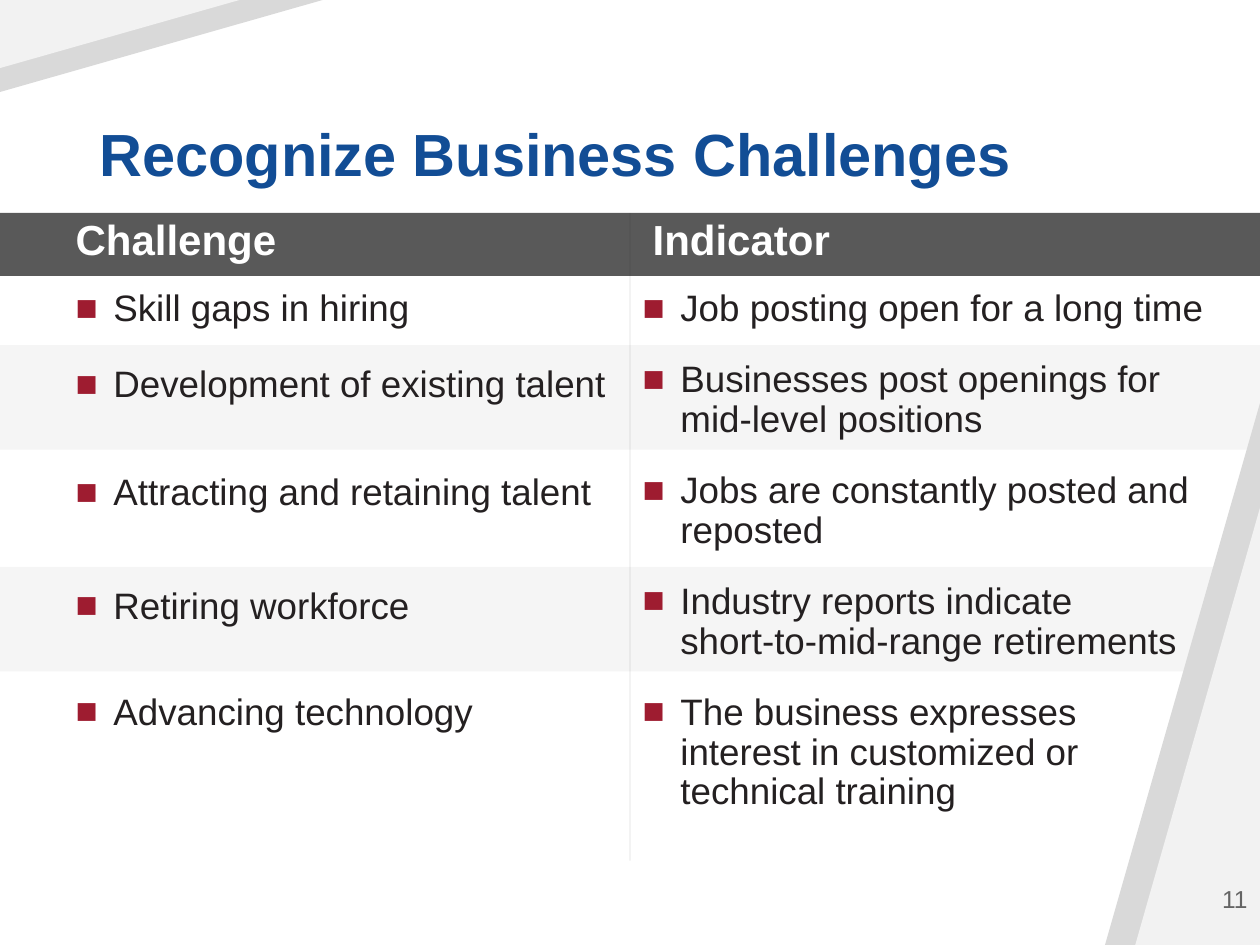
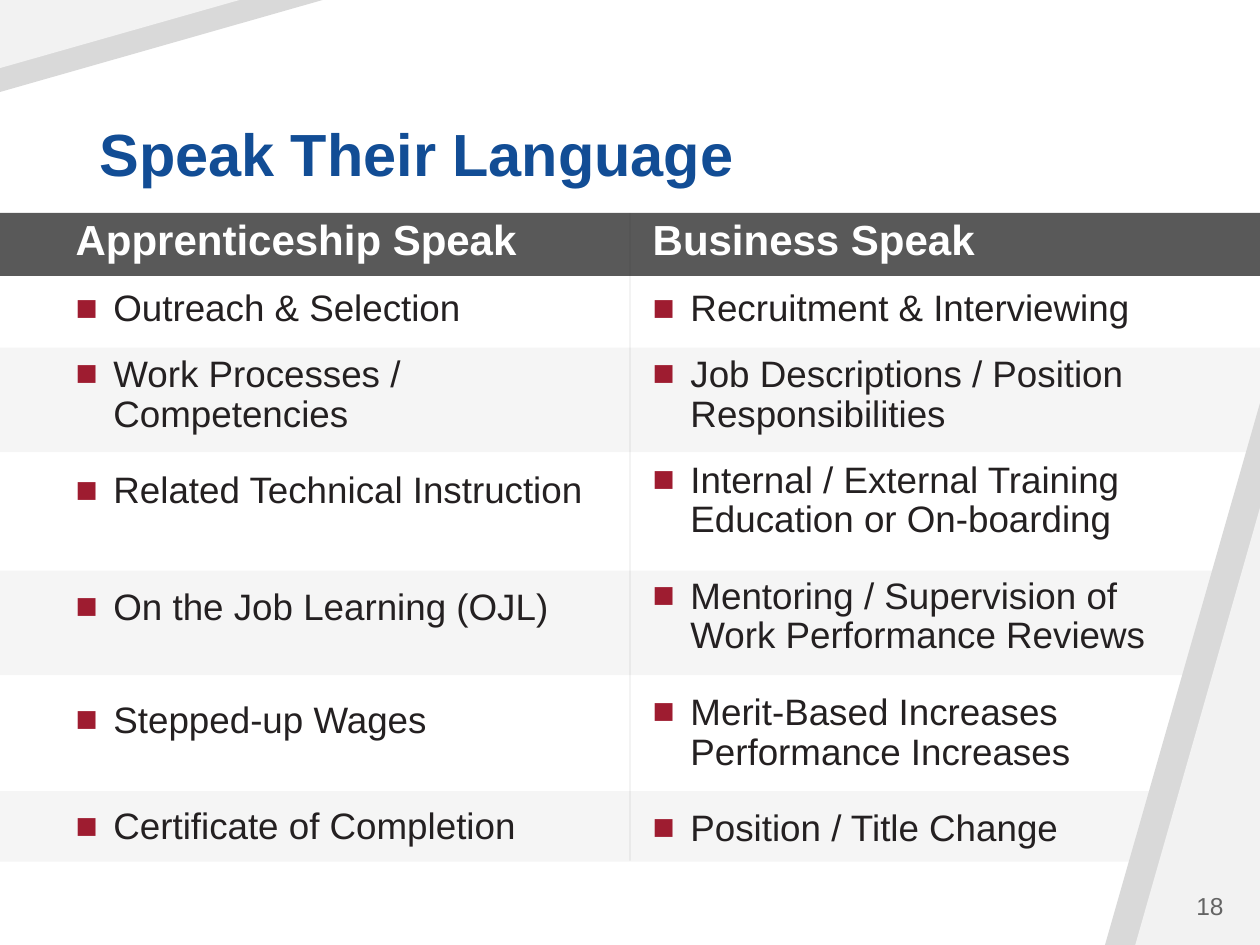
from dataclasses import dataclass
from typing import NamedTuple

from lxml.etree import SubElement
from pptx import Presentation
from pptx.dml.color import RGBColor
from pptx.enum.shapes import MSO_CONNECTOR, MSO_SHAPE
from pptx.enum.text import MSO_ANCHOR, MSO_AUTO_SIZE, PP_ALIGN
from pptx.oxml.ns import qn
from pptx.util import Inches, Pt

# The slide is a grid of 100 columns by 75 rows
SLIDE_WIDTH, SLIDE_HEIGHT = Inches(10), Inches(7.5)
COLUMNS, ROWS = 100, 75
COLUMN, ROW = SLIDE_WIDTH / COLUMNS, SLIDE_HEIGHT / ROWS
FONT = "Arial"
COLOURS = {
    "title": "124D95",
    "band": "595959",
    "header": "FFFFFF",
    "text": "242021",
    "bullet": "9E1C30",
    "stripe": "0C0405",
    "divider": "121010",
    "wedge_edge": "D9D9D9",
    "wedge_fill": "F2F2F2",
    "page": "646464",
}


class Box(NamedTuple):
    left: float
    top: float
    width: float
    height: float

    def emu(self) -> list[int]:
        return [round(length * unit) for length, unit in zip(self, (COLUMN, ROW) * 2)]


class Wedge(NamedTuple):
    width: float
    height: float
    colour: str


class Item(NamedTuple):
    text: str
    gap: float  # points above the item


class Stripe(NamedTuple):
    top: float
    height: float


@dataclass
class Side:
    header: str
    list_box: Box
    items: list[Item]


@dataclass
class Comparison:
    title: str
    left: Side
    right: Side
    stripes: list[Stripe]
    page: str
    page_box: Box


TITLE_BOX = Box(6.9, 4, 87, 11.5)
BAND = Box(0, 16.9, COLUMNS, 5)
DIVIDER_BOTTOM = 68.3
HEADER_BOXES = [Box(left, 17.2, 44.2, 4.5) for left in (5, 50.8)]
CORNER_WEDGES = [Wedge(25.6, 7.3, "wedge_edge"), Wedge(19, 5.4, "wedge_fill")]
SIDE_WEDGES = [Wedge(12.3, 43, "wedge_edge"), Wedge(9.9, 34.7, "wedge_fill")]

COMPARISONS = [
    Comparison(
        "Recognize Business Challenges",
        Side("Challenge", Box(5, 22.5, 44.2, 44.5), [
            Item("Skill gaps in hiring", 0),
            Item("Development of existing talent", 21),
            Item("Attracting and retaining talent", 39),
            Item("Retiring workforce", 42),
            Item("Advancing technology", 38),
        ]),
        Side("Indicator", Box(50, 22.5, 49.2, 44.5), [
            Item("Job posting open for a long time", 0),
            Item("Businesses post openings for mid-level positions", 18),
            Item("Jobs are constantly posted and reposted", 18),
            Item("Industry reports indicate\nshort-to-mid-range retirements", 18),
            Item("The business expresses\ninterest in customized or\ntechnical training", 18),
        ]),
        [Stripe(27.4, 8.3), Stripe(45, 8.3)],
        "11",
        Box(86, 69.5, 14, 4),
    ),
    Comparison(
        "Speak Their Language",
        Side("Apprenticeship Speak", Box(5, 22.5, 44.2, 47), [
            Item("Outreach & Selection", 0),
            Item("Work Processes / Competencies", 15),
            Item("Related Technical Instruction", 21),
            Item("On the Job Learning (OJL)", 44),
            Item("Stepped-up Wages", 42),
            Item("Certificate of Completion", 38),
        ]),
        Side("Business Speak", Box(50.8, 22.5, 44.2, 47), [
            Item("Recruitment & Interviewing", 0),
            Item("Job Descriptions / Position Responsibilities", 15),
            Item("Internal / External Training\nEducation or On-boarding", 15),
            Item("Mentoring / Supervision of Work Performance Reviews", 21),
            Item("Merit-Based Increases\nPerformance Increases", 21),
            Item("Position / Title Change", 21),
        ]),
        [Stripe(27.6, 8.3), Stripe(45.3, 8.3), Stripe(62.8, 5.6)],
        "18",
        Box(84.1, 70.4, 14, 3.2),
    ),
]


def rgb(name: str) -> RGBColor:
    return RGBColor.from_string(COLOURS[name])


def set_opacity(fill, percent: int) -> None:
    """Make a solid fill partly transparent."""
    colour = fill._xPr.find(qn("a:solidFill"))[0]
    SubElement(colour, qn("a:alpha"), val=str(percent * 1000))


def add_block(slide, kind: MSO_SHAPE, box: Box, colour: str):
    block = slide.shapes.add_shape(kind, *box.emu())
    block.shadow.inherit = False
    block.fill.solid()
    block.fill.fore_color.rgb = rgb(colour)
    block.line.fill.background()
    return block


def add_wedge(slide, wedge: Wedge, at_top_left: bool) -> None:
    """Fill the top left or the bottom right corner with a right triangle."""
    left = 0 if at_top_left else COLUMNS - wedge.width
    top = 0 if at_top_left else ROWS - wedge.height
    triangle = add_block(slide, MSO_SHAPE.ISOSCELES_TRIANGLE,
                         Box(left, top, wedge.width, wedge.height), wedge.colour)
    triangle.adjustments[0] = 1
    triangle.rotation = 180 if at_top_left else 0


def add_divider(slide) -> None:
    middle = round(COLUMNS / 2 * COLUMN)
    divider = slide.shapes.add_connector(
        MSO_CONNECTOR.STRAIGHT, middle, round(BAND.top * ROW),
        middle, round(DIVIDER_BOTTOM * ROW))
    divider.line.width = Pt(0.5)
    divider.line.color.rgb = rgb("divider")
    set_opacity(divider.line.fill, 13)
    SubElement(divider._element.spPr, qn("a:effectLst"))


def draw_backdrop(slide, stripes: list[Stripe]) -> None:
    for wedge in CORNER_WEDGES:
        add_wedge(slide, wedge, at_top_left=True)
    add_block(slide, MSO_SHAPE.RECTANGLE, BAND, "band")
    add_divider(slide)
    for stripe in stripes:
        row = add_block(slide, MSO_SHAPE.RECTANGLE,
                        Box(0, stripe.top, COLUMNS, stripe.height), "stripe")
        set_opacity(row.fill, 4)
    for wedge in SIDE_WEDGES:
        add_wedge(slide, wedge, at_top_left=False)


def place(holder, box: Box, anchor: MSO_ANCHOR) -> None:
    holder.left, holder.top, holder.width, holder.height = box.emu()
    frame = holder.text_frame
    frame.word_wrap = True
    frame.auto_size = MSO_AUTO_SIZE.NONE
    frame.vertical_anchor = anchor


def style(paragraph, size: int, colour: str, bold: bool = False,
          spacing: float = 0.9, gap: float = 0, align=PP_ALIGN.LEFT) -> None:
    paragraph.alignment = align
    paragraph.line_spacing = spacing
    paragraph.space_before, paragraph.space_after = Pt(gap), Pt(0)
    for run in paragraph.runs:
        run.font.name, run.font.size, run.font.bold = FONT, Pt(size), bold
        run.font.color.rgb = rgb(colour)


def add_bullet(paragraph) -> None:
    properties = paragraph._p.get_or_add_pPr()
    indent = Inches(0.3)
    properties.set("marL", str(indent))
    properties.set("indent", str(-indent))
    colour = SubElement(properties, qn("a:buClr"))
    SubElement(colour, qn("a:srgbClr"), val=COLOURS["bullet"])
    SubElement(properties, qn("a:buFont"), typeface=FONT)
    SubElement(properties, qn("a:buChar"), char="■")


def write_line(holder, text: str, box: Box, anchor: MSO_ANCHOR, **look) -> None:
    place(holder, box, anchor)
    holder.text_frame.text = text
    style(holder.text_frame.paragraphs[0], **look)


def write_list(holder, side: Side) -> None:
    place(holder, side.list_box, MSO_ANCHOR.TOP)
    frame = holder.text_frame
    for number, item in enumerate(side.items):
        paragraph = frame.add_paragraph() if number else frame.paragraphs[0]
        paragraph.text = item.text
        add_bullet(paragraph)
        style(paragraph, 21, "text", gap=item.gap)


def build_slide(deck, comparison: Comparison) -> None:
    slide = deck.slides.add_slide(deck.slide_layouts.get_by_name("Comparison"))
    title, left_header, left_list, right_header, right_list = slide.placeholders
    draw_backdrop(slide, comparison.stripes)

    # Bring the text in front of the backdrop
    for holder in (title, left_list, right_list, left_header, right_header):
        slide.shapes._spTree.append(holder._element)

    # Title, column headers and lists
    write_line(title, comparison.title, TITLE_BOX, MSO_ANCHOR.BOTTOM,
               size=34, colour="title", bold=True)
    columns = zip((comparison.left, comparison.right), HEADER_BOXES,
                  (left_header, right_header), (left_list, right_list))
    for side, header_box, header, bullets in columns:
        write_line(header, side.header, header_box, MSO_ANCHOR.TOP,
                   size=24, colour="header", bold=True, spacing=0.8)
        write_list(bullets, side)

    # Page number
    page = slide.shapes.add_textbox(*comparison.page_box.emu())
    write_line(page, comparison.page, comparison.page_box, MSO_ANCHOR.MIDDLE,
               size=14, colour="page", align=PP_ALIGN.RIGHT)


def main() -> None:
    deck = Presentation()
    deck.slide_width, deck.slide_height = SLIDE_WIDTH, SLIDE_HEIGHT
    for comparison in COMPARISONS:
        build_slide(deck, comparison)
    deck.save("out.pptx")


if __name__ == "__main__":
    main()
